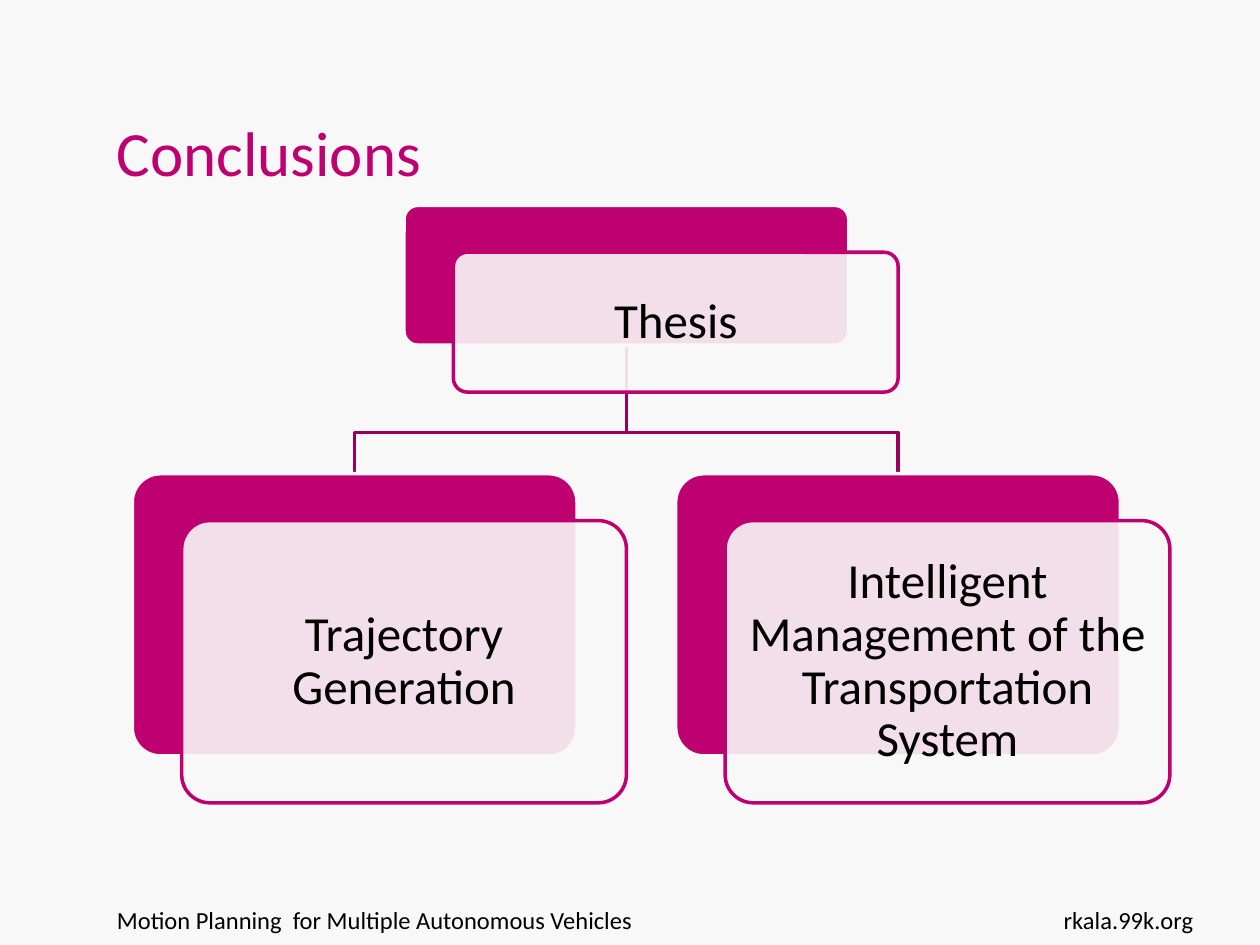
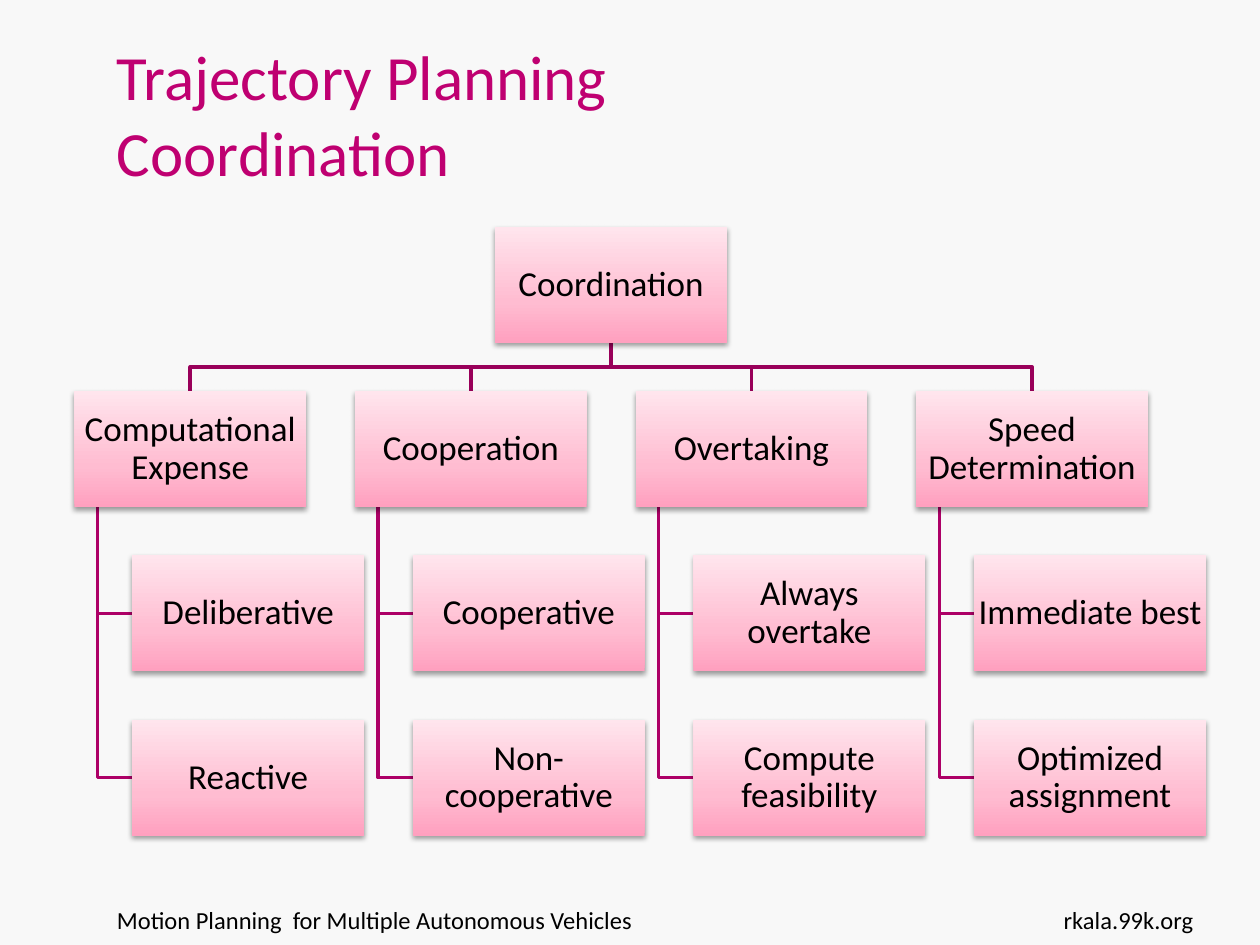
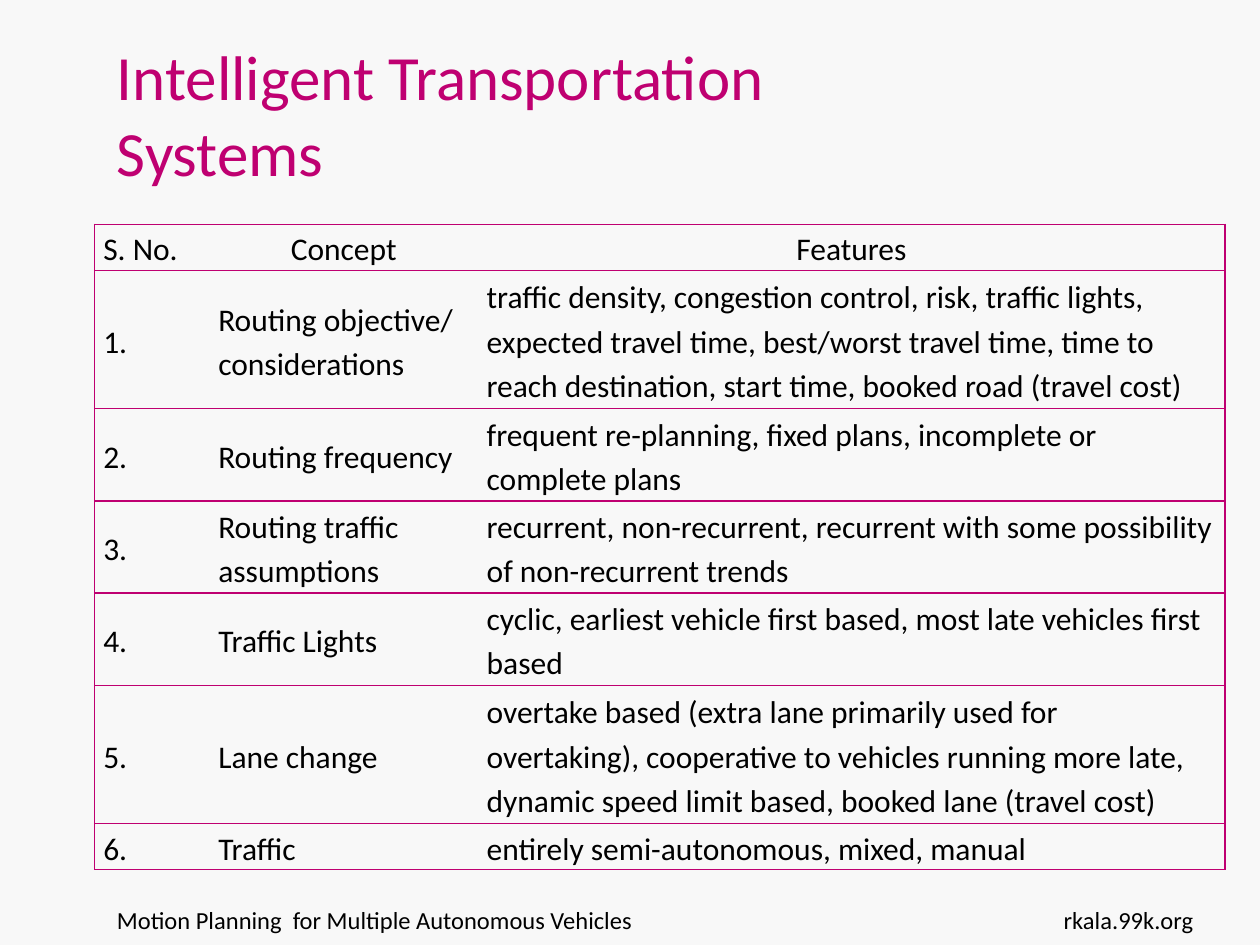
"""Builds three slides on multi-vehicle motion planning: two hierarchies and a table."""
from lxml import etree
from pptx import Presentation
from pptx.dml.color import RGBColor
from pptx.enum.shapes import MSO_SHAPE
from pptx.enum.text import MSO_ANCHOR, PP_ALIGN
from pptx.oxml.ns import qn
from pptx.util import Inches, Pt

LEFT, CENTER, RIGHT = PP_ALIGN.LEFT, PP_ALIGN.CENTER, PP_ALIGN.RIGHT
TOP, MIDDLE, BOTTOM = MSO_ANCHOR.TOP, MSO_ANCHOR.MIDDLE, MSO_ANCHOR.BOTTOM
RECT, ROUNDED = MSO_SHAPE.RECTANGLE, MSO_SHAPE.ROUNDED_RECTANGLE

COLORS = {
    "paper": "F8F8F8",
    "accent": "BF0071",
    "trunk": "99005A",
    "branch": "AD0067",
    "ink": "000000",
}
PINK_STOPS = ((0, "FFA0BF"), (35, "FFBCD1"), (100, "FFE5ED"))
FONT = "Calibri"
COLUMNS, ROWS = 100, 75
FOOTER = "Motion Planning  for Multiple Autonomous Vehicles"
SITE = "rkala.99k.org"
NO_TABLE_STYLE = "{2D5ABB26-0587-4C30-8999-92F81FD0307C}"

CONCEPTS = [
    ("S. No.", "Concept", "Features"),
    ("1.", "Routing objective/ considerations",
     "traffic density, congestion control, risk, traffic lights, expected travel time, "
     "best/worst travel time, time to reach destination, start time, booked road (travel cost)"),
    ("2.", "Routing frequency",
     "frequent re-planning, fixed plans, incomplete or complete plans"),
    ("3.", "Routing traffic assumptions",
     "recurrent, non-recurrent, recurrent with some possibility of non-recurrent trends"),
    ("4.", "Traffic Lights",
     "cyclic, earliest vehicle first based, most late vehicles first based"),
    ("5.", "Lane change",
     "overtake based (extra lane primarily used for overtaking), cooperative to vehicles "
     "running more late, dynamic speed limit based, booked lane (travel cost)"),
    ("6.", "Traffic", "entirely semi-autonomous, mixed, manual"),
]
COORDINATION = {
    "Computational Expense": ("Deliberative", "Reactive"),
    "Cooperation": ("Cooperative", "Non-cooperative"),
    "Overtaking": ("Always overtake", "Compute feasibility"),
    "Speed Determination": ("Immediate best", "Optimized assignment"),
}


def rgb(name):
    return RGBColor.from_string(COLORS[name])


def add_xml(parent, tag, **attributes):
    return etree.SubElement(parent, qn(tag), {key: str(value) for key, value in attributes.items()})


class Deck:
    """Holds the shared style and the current slide."""

    def __init__(self):
        self.prs = Presentation()
        self.prs.slide_width, self.prs.slide_height = Inches(10), Inches(7.5)
        background = self.prs.slide_master.background.fill
        background.solid()
        background.fore_color.rgb = rgb("paper")

    def x(self, columns):
        return round(self.prs.slide_width * columns / COLUMNS)

    def y(self, rows):
        return round(self.prs.slide_height * rows / ROWS)

    def place(self, box):
        left, top, width, height = box
        return self.x(left), self.y(top), self.x(width), self.y(height)

    def slide(self, title):
        self.shapes = self.prs.slides.add_slide(self.prs.slide_layouts[6]).shapes
        self.text((8.3, 71.3, 69.3, 3.7), FOOTER, 14)
        self.text((8.3, 3, 67.7, 12.5), title, 36, "accent", anchor=BOTTOM)
        self.text((80.7, 71.3, 15, 3.7), SITE, 14, align=RIGHT)

    def set_words(self, frame, words, size, color="ink", align=LEFT, spacing=1.0):
        frame.text = words
        paragraph = frame.paragraphs[0]
        paragraph.alignment, paragraph.line_spacing = align, spacing
        font = paragraph.font
        font.name, font.size, font.color.rgb = FONT, Pt(size), rgb(color)

    def text(self, box, words, size, color="ink", align=LEFT, anchor=TOP):
        frame = self.shapes.add_textbox(*self.place(box)).text_frame
        frame.word_wrap, frame.vertical_anchor = True, anchor
        self.set_words(frame, words, size, color, align)

    def label(self, shape, words, size, inset):
        frame = shape.text_frame
        frame.word_wrap, frame.vertical_anchor = True, MIDDLE
        frame.margin_left = frame.margin_right = Inches(inset)
        frame.margin_top = frame.margin_bottom = Inches(inset)
        self.set_words(frame, words, size, align=CENTER, spacing=0.9)

    def panel(self, box, fill, line):
        panel = self.shapes.add_shape(ROUNDED, *self.place(box))
        panel.adjustments[0] = 0.1
        panel.shadow.inherit = False
        panel.fill.solid()
        panel.fill.fore_color.rgb = rgb(fill)
        panel.line.color.rgb, panel.line.width = rgb(line), Pt(2)
        return panel

    def layered_card(self, box, words):
        left, top, width, height = box
        self.panel(box, "accent", "paper")
        front = self.panel((left + 3.92, top + 3.72, width, height), "paper", "accent")
        tint = front._element.spPr.find(qn("a:solidFill"))[0]
        add_xml(tint, "a:alpha", val=90000)
        self.label(front, words, 28, 0.11)

    def pink_node(self, box, words):
        node = self.shapes.add_shape(RECT, *self.place(box))
        node.fill.gradient()
        node.fill.gradient_angle = 90
        node.line.fill.background()
        node.shadow.inherit = False
        properties = node._element.spPr
        stops = properties.find(".//" + qn("a:gsLst"))
        stops.clear()
        for share, color in PINK_STOPS:
            add_xml(add_xml(stops, "a:gs", pos=share * 1000), "a:srgbClr", val=color)
        shadow = add_xml(properties.find(qn("a:effectLst")), "a:outerShdw",
                         blurRad=Pt(3.1), dist=Pt(1.6), dir=5400000, rotWithShape=0)
        add_xml(add_xml(shadow, "a:srgbClr", val=COLORS["ink"]), "a:alpha", val=38000)
        self.label(node, words, 20, 0.01)

    def route(self, points, color):
        start, *others = [(self.x(column), self.y(row)) for column, row in points]
        builder = self.shapes.build_freeform(*start)
        builder.add_line_segments(others, close=False)
        route = builder.convert_to_shape()
        route.shadow.inherit = False
        route.fill.background()
        route.line.color.rgb, route.line.width = rgb(color), Pt(2)

    def fork(self, parent, child, bend):
        left, top, width, height = parent
        start_x, start_y = left + width / 2, top + height
        end_x, end_y = child[0] + child[2] / 2, child[1]
        bend_y = start_y + (end_y - start_y) * bend
        self.route([(start_x, start_y), (start_x, bend_y), (end_x, bend_y), (end_x, end_y)], "trunk")

    def hang(self, parent, child):
        left, top, width, height = parent
        stem, middle = left + width / 10, child[1] + child[3] / 2
        self.route([(stem, top + height), (stem, middle), (child[0], middle)], "branch")

    def table(self, left, top, widths, heights, rows):
        box = left, top, sum(widths), sum(heights)
        table = self.shapes.add_table(len(rows), len(widths), *self.place(box)).table
        table._tbl.tblPr.find(qn("a:tableStyleId")).text = NO_TABLE_STYLE
        table.first_row = table.horz_banding = False
        for column, width in zip(table.columns, widths):
            column.width = self.x(width)
        for r, (row, height, entries) in enumerate(zip(table.rows, heights, rows)):
            row.height = self.y(height)
            for c, (cell, words) in enumerate(zip(row.cells, entries)):
                sides = "L" * (c == 0) + "R" * (c == len(widths) - 1) + "TB"
                self.cell(cell, words, CENTER if r == 0 and c else LEFT, sides)

    def cell(self, cell, words, align, sides):
        cell.margin_left = cell.margin_right = Inches(0.07)
        cell.margin_top = cell.margin_bottom = 0
        cell.vertical_anchor = MIDDLE
        for side in sides:
            border = add_xml(cell._tc.get_or_add_tcPr(), "a:ln" + side, w=Pt(1))
            add_xml(add_xml(border, "a:solidFill"), "a:srgbClr", val=COLORS["accent"])
        cell.fill.solid()
        cell.fill.fore_color.rgb = rgb("paper")
        self.set_words(cell.text_frame, words, 18, align=align, spacing=1.15)


def conclusions(deck):
    deck.slide("Conclusions")
    left, width, pitch = 10.5, 35.3, 43.13
    thesis = (left + pitch / 2, 16.3, width, 11.1)
    topics = ["Trajectory Generation", "Intelligent Management of the Transportation System"]
    boxes = [(left + i * pitch, 37.6, width, 22.4) for i in range(len(topics))]
    for box in boxes:
        deck.fork(thesis, box, 0.68)
    deck.layered_card(thesis, "Thesis")
    for box, topic in zip(boxes, topics):
        deck.layered_card(box, topic)


def coordination(deck):
    deck.slide("Trajectory Planning\vCoordination")
    left, top, width, height = 5.9, 18, 18.4, 9.2
    pitch_x, pitch_y = 22.27, 13.04

    def node_box(column, level, indent=0):
        return left + column * pitch_x + indent, top + level * pitch_y, width, height

    root = node_box((len(COORDINATION) - 1) / 2, 0)
    nodes = [(root, "Coordination")]
    for column, (aspect, options) in enumerate(COORDINATION.items()):
        aspect_box = node_box(column, 1)
        deck.fork(root, aspect_box, 0.5)
        nodes.append((aspect_box, aspect))
        for level, option in enumerate(options, 2):
            option_box = node_box(column, level, width / 4)
            deck.hang(aspect_box, option_box)
            nodes.append((option_box, option))
    for box, words in nodes:
        deck.pink_node(box, words)


def transportation_systems(deck):
    deck.slide("Intelligent Transportation Systems")
    one_line, two_lines, three_lines = 3.66, 7.32, 10.98
    heights = [one_line, three_lines, two_lines, two_lines, two_lines, three_lines, one_line]
    deck.table(7.5, 17.8, (9.13, 21.3, 59.3), heights, CONCEPTS)


def main():
    deck = Deck()
    conclusions(deck)
    coordination(deck)
    transportation_systems(deck)
    deck.prs.save("out.pptx")


if __name__ == "__main__":
    main()
